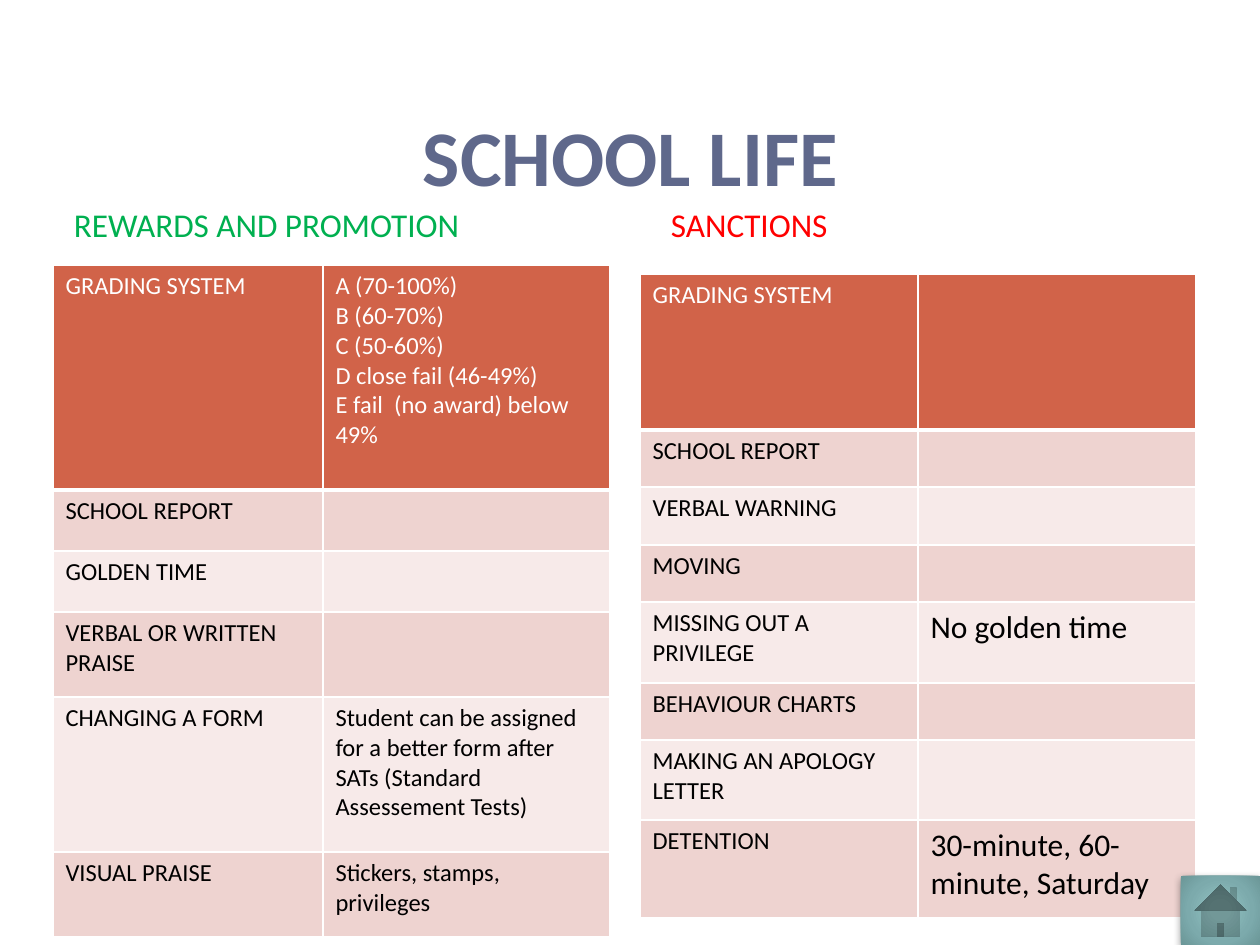
from lxml.etree import SubElement
from pptx import Presentation
from pptx.dml.color import RGBColor
from pptx.enum.shapes import MSO_SHAPE
from pptx.enum.text import MSO_ANCHOR, PP_ALIGN
from pptx.oxml import parse_xml
from pptx.oxml.ns import nsdecls, qn
from pptx.util import Emu, Pt

PX = 914400 / 126
FONT = "Calibri"
WHITE = RGBColor(0xFF, 0xFF, 0xFF)
BLACK = RGBColor(0x00, 0x00, 0x00)
SLATE = RGBColor(0x5F, 0x68, 0x8B)
GREEN = RGBColor(0x00, 0xB0, 0x50)
RED = RGBColor(0xFF, 0x00, 0x00)
RUST = RGBColor(0xD1, 0x63, 0x49)
PINK = RGBColor(0xEE, 0xD3, 0xD0)
PALE_PINK = RGBColor(0xF7, 0xEA, 0xE9)


def px(*lengths):
    return [Emu(round(length * PX)) for length in lengths]


def add_text(paragraph, text, size, color, bold=False):
    run = paragraph.add_run()
    run.text = text
    run.font.name = FONT
    run.font.size = Pt(size)
    run.font.bold = bold
    run.font.color.rgb = color


prs = Presentation()
prs.slide_width, prs.slide_height = px(1260, 945)
slide = prs.slides.add_slide(prs.slide_layouts[5])

# Title
title = slide.shapes.title
title.left, title.top, title.width, title.height = px(53, 96, 1155, 118)
title.text_frame.vertical_anchor = MSO_ANCHOR.MIDDLE
heading = title.text_frame.paragraphs[0]
heading.alignment = PP_ALIGN.CENTER
add_text(heading, "SCHOOL LIFE", 45, SLATE, bold=True)

# Column headings
for left, text, color in [(53, "REWARDS AND PROMOTION", GREEN), (650, "SANCTIONS", RED)]:
    banner = slide.shapes.add_shape(MSO_SHAPE.RECTANGLE, *px(left, 195, 557, 59))
    banner.shadow.inherit = False
    banner.fill.solid()
    banner.fill.fore_color.rgb = WHITE
    banner.line.color.rgb = WHITE
    banner.line.width = Pt(0.85)
    banner.text_frame.word_wrap = True
    banner.text_frame.margin_left = px(21)[0]
    banner.text_frame.vertical_anchor = MSO_ANCHOR.MIDDLE
    paragraph = banner.text_frame.paragraphs[0]
    paragraph.alignment = PP_ALIGN.LEFT
    paragraph.space_before = Pt(1)
    add_text(paragraph, text, 19, color)

# Tables: each row is height, measure, details; then the size of the details
GRADES = ["A (70-100%)", "B (60-70%)", "C (50-60%)", "D close fail (46-49%)",
          "E fail  (no award) below 49%"]
rewards = [
    (225, "GRADING SYSTEM", GRADES),
    (61, "SCHOOL REPORT", []),
    (61, "GOLDEN TIME", []),
    (85, "VERBAL OR WRITTEN PRAISE", []),
    (155, "CHANGING A FORM", ["Student can be assigned for a better form after SATs "
                              "(Standard Assessement Tests)"]),
    (85, "VISUAL PRAISE", ["Stickers, stamps, privileges"]),
]
sanctions = [
    (156, "GRADING SYSTEM", []),
    (57, "SCHOOL REPORT", []),
    (58, "VERBAL WARNING", []),
    (57, "MOVING", []),
    (81, "MISSING OUT A PRIVILEGE", ["No golden time"]),
    (57, "BEHAVIOUR CHARTS", []),
    (80, "MAKING AN APOLOGY LETTER", []),
    (98, "DETENTION", ["30-minute, 60-minute, Saturday"]),
]
for left, top, widths, measures, detail_size in [
    (53, 265, (270, 287), rewards, 14),
    (640, 274, (278, 278), sanctions, 18),
]:
    total_height = sum(height for height, _, _ in measures)
    table = slide.shapes.add_table(
        len(measures), 2, *px(left, top, sum(widths), total_height)).table
    for column, width in zip(table.columns, px(*widths)):
        column.width = width
    for row_index, (height, measure, details) in enumerate(measures):
        table.rows[row_index].height = px(height)[0]
        is_header = row_index == 0
        band = RUST if is_header else PINK if row_index % 2 else PALE_PINK
        for column_index, (lines, size) in enumerate([([measure], 14), (details, detail_size)]):
            cell = table.cell(row_index, column_index)
            properties = cell._tc.get_or_add_tcPr()
            for side in "LRTB":
                weight = 3 if is_header and side == "B" else 1
                border = SubElement(properties, qn(f"a:ln{side}"), w=str(Pt(weight)))
                border_fill = SubElement(border, qn("a:solidFill"))
                SubElement(border_fill, qn("a:srgbClr"), val=str(WHITE))
            cell.fill.solid()
            cell.fill.fore_color.rgb = band
            for line_index, line in enumerate(lines):
                frame = cell.text_frame
                paragraph = frame.add_paragraph() if line_index else frame.paragraphs[0]
                add_text(paragraph, line, size, WHITE if is_header else BLACK)

# Home button with a radial gradient and a soft shadow
home = slide.shapes.add_shape(MSO_SHAPE.ACTION_BUTTON_HOME, *px(1181, 876, 79, 69))
home.line.fill.background()
home.fill.background()
stops = "".join(
    f'<a:gs pos="{position * 1000}"><a:srgbClr val="{color}"/></a:gs>'
    for position, color in [(0, "90BFC0"), (15, "8FBEBF"), (62, "7CAAAC"),
                            (97, "6C9899"), (100, "689697")])
home_properties = home._element.spPr
home_properties.replace(home_properties.find(qn("a:noFill")), parse_xml(
    f'<a:gradFill {nsdecls("a")} rotWithShape="1"><a:gsLst>{stops}</a:gsLst>'
    '<a:path path="circle"><a:fillToRect l="50000" t="50000" r="50000" b="50000"/></a:path>'
    '</a:gradFill>'))
home.shadow.inherit = False
home_properties.find(qn("a:effectLst")).append(parse_xml(
    f'<a:outerShdw {nsdecls("a")} blurRad="{Pt(5)}" dist="{Pt(2)}" dir="5400000" '
    'rotWithShape="0"><a:srgbClr val="000000"><a:alpha val="43000"/></a:srgbClr></a:outerShdw>'))

prs.save("out.pptx")
